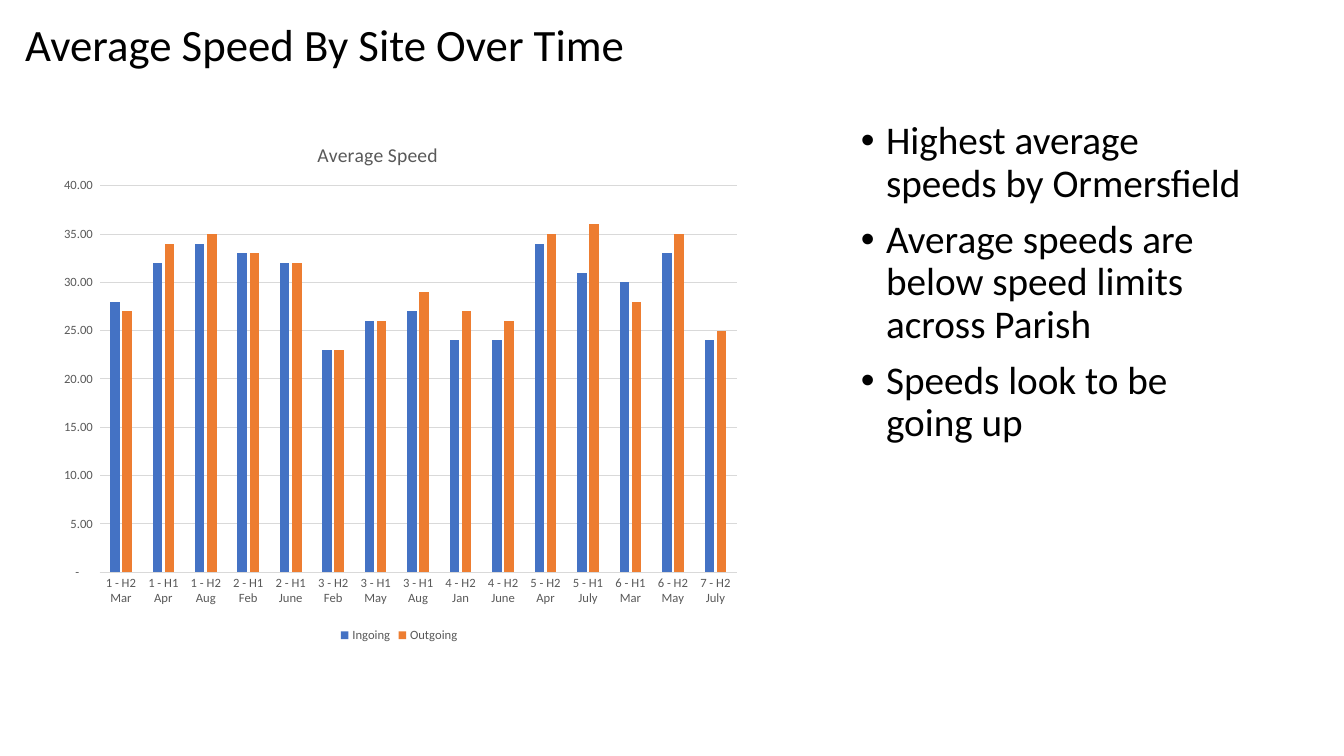
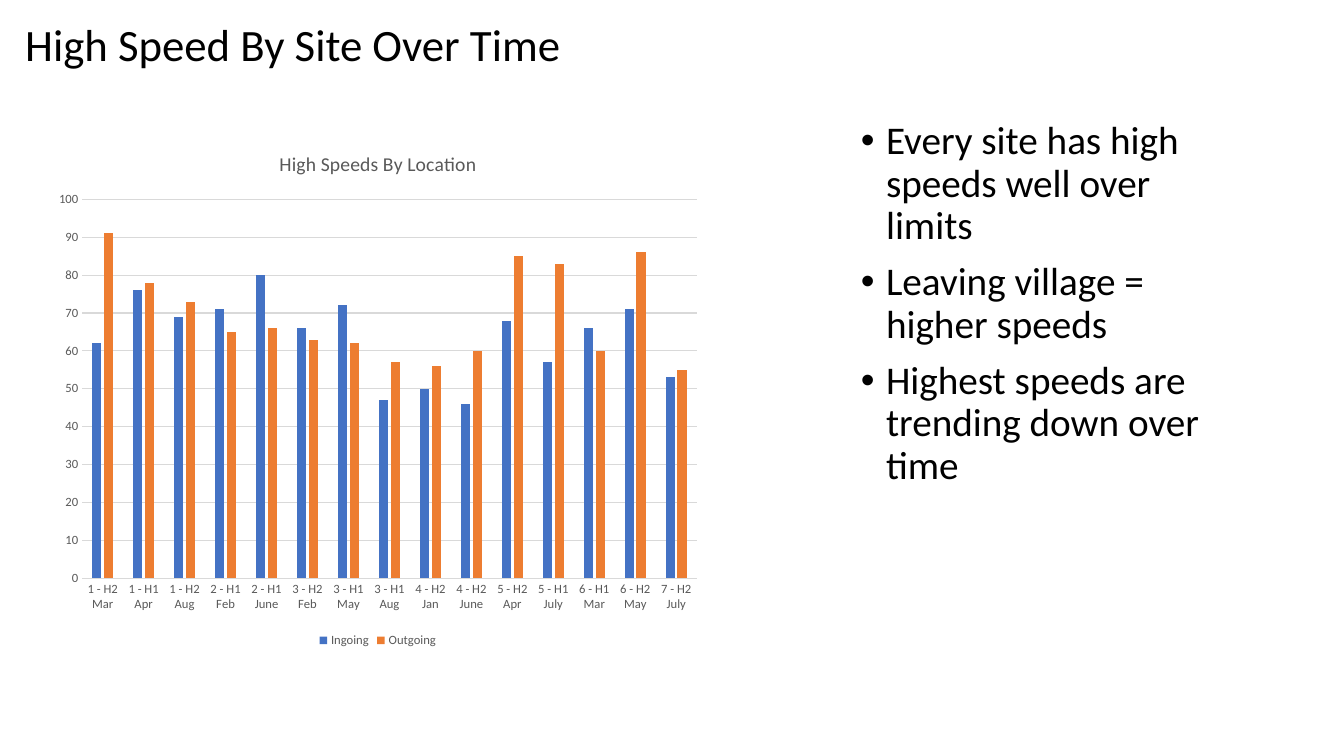
"""Build two slides that compare vehicle speeds by site, each a column chart with findings."""
from dataclasses import dataclass

from lxml import etree
from pptx import Presentation
from pptx import util as u
from pptx.chart import data as cd
from pptx.dml import color as col
from pptx.enum import chart as ce
from pptx.enum import text as te
from pptx.oxml import ns

Pt = u.Pt
FONT = "Calibri"
HUES = {
    "text": "000000",
    "label": "595959",
    "grid": "D9D9D9",
    "Ingoing": "4472C4",
    "Outgoing": "ED7D31",
}
SITES = [
    "1 - H2 Mar", "1 - H1 Apr", "1 - H2 Aug", "2 - H1 Feb", "2 - H1 June",
    "3 - H2 Feb", "3 - H1 May", "3 - H1 Aug", "4 - H2 Jan", "4 - H2 June",
    "5 - H2 Apr", "5 - H1 July", "6 - H1 Mar", "6 - H2 May", "7 - H2 July",
]


@dataclass(frozen=True)
class Box:
    left: float
    top: float
    width: float = 0
    height: float = 0


@dataclass(frozen=True)
class Graph:
    title: str
    box: Box
    head: Box
    plot: Box
    top: int
    step: int
    form: str
    speeds: dict[str, list[int]]


@dataclass(frozen=True)
class Page:
    title: str
    points: list[str]
    graph: Graph


TITLE = Box(10.8, 2, 828, 63.4)
BODY = Box(607.7, 82.8, 286.6, 403.2)

PAGES = [
    Page(
        "Average Speed By Site Over Time",
        [
            "Highest average speeds by Ormersfield",
            "Average speeds are below speed limits across Parish",
            "Speeds look to be going up",
        ],
        Graph(
            "Average Speed",
            Box(33.8, 83.2, 502.6, 378.7),
            Box(190.3, 15.5),
            Box(37.4, 49.5, 455, 276),
            40, 5,
            '_(* #,##0.00_);_(* \\(#,##0.00\\);_(* "-"??_);_(@_)',
            {
                "Ingoing": [28, 32, 34, 33, 32, 23, 26, 27,
                            24, 24, 34, 31, 30, 33, 24],
                "Outgoing": [27, 34, 35, 33, 32, 23, 26, 29,
                             27, 26, 35, 36, 28, 35, 25],
            },
        ),
    ),
    Page(
        "High Speed By Site Over Time",
        [
            "Every site has high speeds well over limits",
            "Leaving village = higher speeds",
            "Highest speeds are trending down over time",
        ],
        Graph(
            "High Speeds By Location",
            Box(32.6, 94, 474.5, 371.5),
            Box(164.5, 10.9),
            Box(26.1, 48.5, 439, 270.5),
            100, 10,
            "General",
            {
                "Ingoing": [62, 76, 69, 71, 80, 66, 72, 47,
                            50, 46, 68, 57, 66, 71, 53],
                "Outgoing": [91, 78, 73, 65, 66, 63, 62, 57,
                             56, 60, 85, 83, 60, 86, 55],
            },
        ),
    ),
]


def hue(name: str) -> col.RGBColor:
    return col.RGBColor.from_string(HUES[name])


def style(font, size: float, name: str) -> None:
    font.name = FONT
    font.size = Pt(size)
    font.bold = False
    font.color.rgb = hue(name)


def place(shape, box: Box) -> None:
    shape.left, shape.top = Pt(box.left), Pt(box.top)
    shape.width, shape.height = Pt(box.width), Pt(box.height)


def write(shape, box: Box, lines: list[str], size: float) -> None:
    place(shape, box)
    frame = shape.text_frame
    frame.text = "\n".join(lines)
    frame.word_wrap = True
    frame.auto_size = te.MSO_AUTO_SIZE.NONE
    for para in frame.paragraphs:
        para.alignment = te.PP_ALIGN.LEFT
        para.line_spacing = 0.9
        for run in para.runs:
            style(run.font, size, "text")


def indent(shape) -> None:
    for para in shape.text_frame.paragraphs:
        para.space_before = Pt(10)
        props = para._p.get_or_add_pPr()
        props.set("marL", str(int(Pt(18))))
        props.set("indent", str(-int(Pt(18))))


def layout(parent, index: int, part: Box, whole: Box) -> None:
    for old in parent.findall(ns.qn("c:layout")):
        parent.remove(old)
    vals = {"xMode": "edge", "yMode": "edge",
            "x": part.left / whole.width, "y": part.top / whole.height}
    if part.width:
        vals = {"layoutTarget": "inner", **vals,
                "w": part.width / whole.width, "h": part.height / whole.height}
    node = etree.Element(ns.qn("c:layout"))
    manual = etree.SubElement(node, ns.qn("c:manualLayout"))
    for key, val in vals.items():
        etree.SubElement(manual, ns.qn(f"c:{key}")).set("val", str(val))
    parent.insert(index, node)


def rule(line) -> None:
    line.color.rgb = hue("grid")
    line.width = Pt(0.75)


def axes(chart, graph: Graph) -> None:
    cat, val = chart.category_axis, chart.value_axis
    for axis in (cat, val):
        axis.major_tick_mark = axis.minor_tick_mark = ce.XL_TICK_MARK.NONE
        style(axis.tick_labels.font, 9, "label")
    rule(cat.format.line)
    val.format.line.fill.background()
    val.has_major_gridlines = True
    rule(val.major_gridlines.format.line)
    val.minimum_scale, val.maximum_scale = 0, graph.top
    val.major_unit = graph.step
    val.tick_labels.number_format = graph.form
    val.tick_labels.number_format_is_linked = False


def draw(slide, graph: Graph) -> None:
    data = cd.CategoryChartData(number_format=graph.form)
    data.categories = SITES
    for name, vals in graph.speeds.items():
        data.add_series(name, vals)
    box = graph.box
    chart = slide.shapes.add_chart(
        ce.XL_CHART_TYPE.COLUMN_CLUSTERED,
        Pt(box.left), Pt(box.top), Pt(box.width), Pt(box.height), data,
    ).chart
    style(chart.font, 10, "text")

    chart.has_title = True
    frame = chart.chart_title.text_frame
    frame.text = graph.title
    style(frame.paragraphs[0].runs[0].font, 14, "label")
    layout(chart.element.xpath("c:chart/c:title")[0], 1, graph.head, box)
    layout(chart.element.xpath("c:chart/c:plotArea")[0], 0, graph.plot, box)

    chart.has_legend = True
    chart.legend.position = ce.XL_LEGEND_POSITION.BOTTOM
    chart.legend.include_in_layout = False
    style(chart.legend.font, 9, "label")

    axes(chart, graph)
    plot = chart.plots[0]
    plot.gap_width, plot.overlap = 219, -27
    plot.vary_by_categories = False
    for bars in plot.series:
        bars.format.fill.solid()
        bars.format.fill.fore_color.rgb = hue(bars.name)


def build(deck, page: Page) -> None:
    slide = deck.slides.add_slide(deck.slide_layouts[1])
    title, body = slide.shapes.title, slide.placeholders[1]
    write(title, TITLE, [page.title], 32)
    title.text_frame.vertical_anchor = te.MSO_ANCHOR.MIDDLE
    write(body, BODY, page.points, 28)
    indent(body)
    draw(slide, page.graph)


def main() -> None:
    deck = Presentation()
    deck.slide_width, deck.slide_height = Pt(960), Pt(540)
    for page in PAGES:
        build(deck, page)
    deck.save("out.pptx")


if __name__ == "__main__":
    main()
